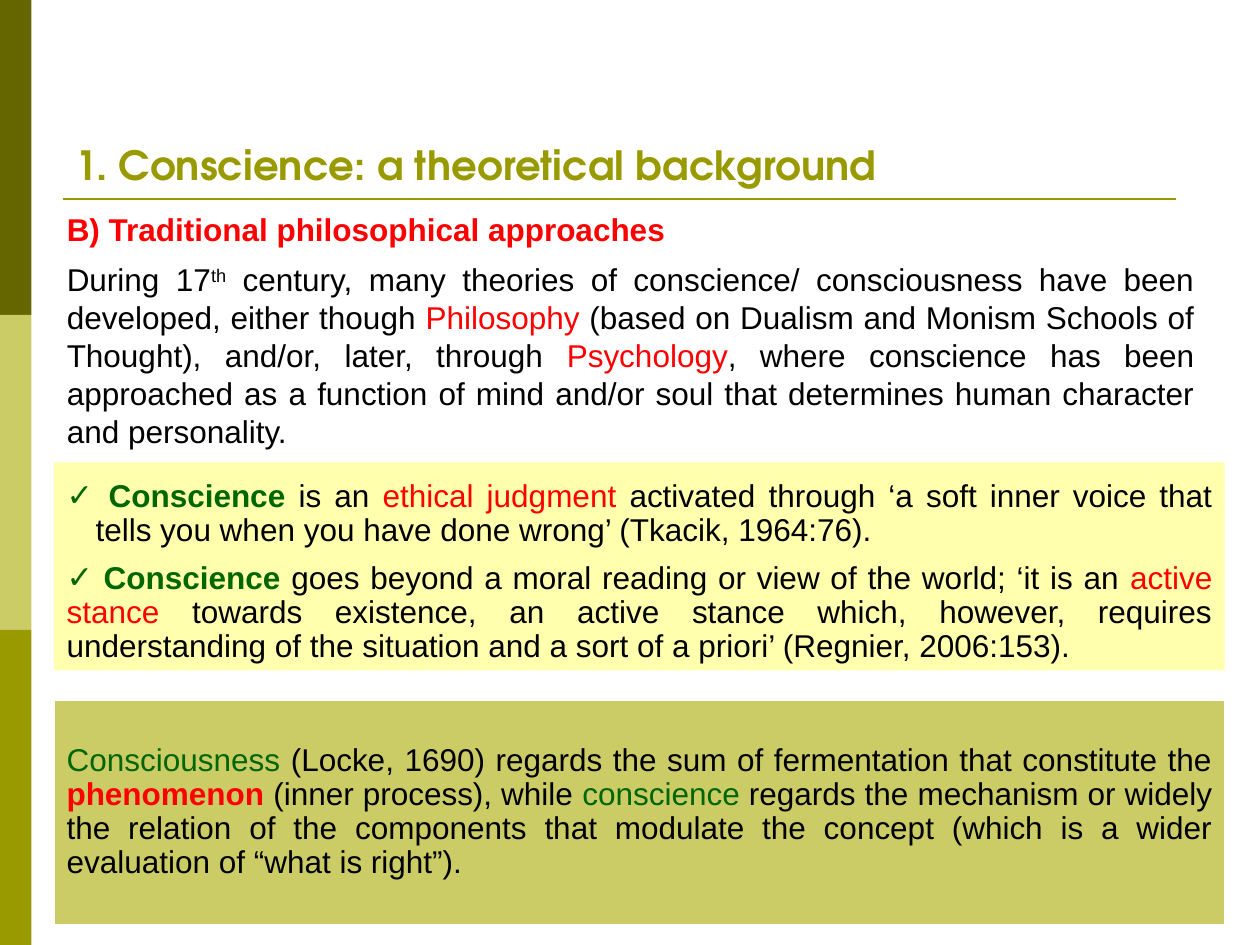
from dataclasses import dataclass

from pptx import Presentation
from pptx.dml.color import RGBColor
from pptx.enum.shapes import MSO_CONNECTOR, MSO_SHAPE
from pptx.enum.text import MSO_ANCHOR, MSO_AUTO_SIZE, PP_ALIGN
from pptx.oxml.ns import qn
from pptx.util import Inches, Pt


@dataclass(frozen=True)
class Theme:
    title_font: str = "TeX Gyre Adventor"
    body_font: str = "Arial"
    title_size: float = 23
    body_size: float = 18
    dark: str = "666600"
    olive: str = "999900"
    light: str = "CCCC66"
    cream: str = "FFFFAD"
    white: str = "FFFFFF"
    black: str = "000000"
    red: str = "FF0000"
    green: str = "006600"


T = Theme()


def rgb(value):
    return RGBColor.from_string(value)


def add_text(p, text, color=T.black, bold=False, size=T.body_size,
             font=T.body_font, baseline=None):
    r = p.add_run()
    r.text = text
    f = r.font
    f.name, f.size, f.bold = font, Pt(size), bold
    f.color.rgb = rgb(color)
    if baseline:
        r._r.get_or_add_rPr().set("baseline", str(baseline * 1000))


def add_paragraph(tf, runs, first=False, align=PP_ALIGN.JUSTIFY, before=0,
                  spacing=1.0, bullet=None, hanging=0):
    """Add (text, format) runs as one paragraph, with an optional bullet."""
    p = tf.paragraphs[0] if first else tf.add_paragraph()
    p.alignment, p.line_spacing = align, spacing
    p.space_before, p.space_after = Pt(before), Pt(0)
    pPr = p._p.get_or_add_pPr()
    pPr.set("marL", str(Inches(hanging)))
    pPr.set("indent", str(-Inches(hanging)))
    if bullet:
        pPr.append(pPr.makeelement(qn("a:buFont"), {"typeface": T.body_font}))
        pPr.append(pPr.makeelement(qn("a:buChar"), {"char": bullet}))
    else:
        pPr.append(pPr.makeelement(qn("a:buNone"), {}))
    for text, fmt in runs:
        add_text(p, text, **fmt)


def place(sp, box):
    sp.left, sp.top, sp.width, sp.height = (Inches(v) for v in box)


def set_frame(sp, anchor):
    tf = sp.text_frame
    tf.word_wrap, tf.auto_size = True, MSO_AUTO_SIZE.NONE
    tf.vertical_anchor = anchor
    return tf


def add_panel(s, box, fill, line=None):
    sp = s.shapes.add_shape(MSO_SHAPE.RECTANGLE, *(Inches(v) for v in box))
    sp.shadow.inherit = False
    sp.fill.solid()
    sp.fill.fore_color.rgb = rgb(fill)
    if line:
        sp.line.color.rgb = rgb(line)
        sp.line.width = Pt(0.75)
    else:
        sp.line.fill.background()
    return sp


def add_sidebar(s, box):
    x, y, w, h = box
    colors = (T.dark, T.light, T.olive)
    step = h / len(colors)
    for i, color in enumerate(colors):
        add_panel(s, (x, y + i * step, w, step), color)


def add_title(s, box):
    sp = s.shapes.title
    place(sp, box)
    tf = set_frame(sp, MSO_ANCHOR.BOTTOM)
    runs = [("1. Conscience: a theoretical background",
             dict(color=T.olive, bold=True, size=T.title_size, font=T.title_font))]
    add_paragraph(tf, runs, first=True, align=PP_ALIGN.LEFT)


def add_rule(s, x1, x2, y):
    c = s.shapes.add_connector(MSO_CONNECTOR.STRAIGHT, Inches(x1), Inches(y),
                               Inches(x2), Inches(y))
    c.line.color.rgb = rgb(T.olive)
    c.line.width = Pt(1.5)
    spPr = c._element.spPr
    spPr.append(spPr.makeelement(qn("a:effectLst"), {}))


def add_body(s, box):
    sp = s.placeholders[1]
    place(sp, box)
    tf = set_frame(sp, MSO_ANCHOR.TOP)
    add_paragraph(tf, [("B) Traditional philosophical approaches",
                        dict(color=T.red, bold=True))],
                  first=True, align=PP_ALIGN.LEFT, before=3.6)
    add_paragraph(tf, [
        ("During 17", {}),
        ("th", dict(baseline=30)),
        (" century, many theories of conscience/ consciousness have been "
         "developed, either though ", {}),
        ("Philosophy", dict(color=T.red)),
        (" (based on Dualism and Monism Schools of Thought), and/or, later, "
         "through ", {}),
        ("Psychology", dict(color=T.red)),
        (", where conscience has been approached as a function of mind and/or "
         "soul that determines human character and personality.", {}),
    ], before=7)


def add_definitions(s, box):
    tf = set_frame(add_panel(s, box, T.cream), MSO_ANCHOR.BOTTOM)
    term = (" Conscience ", dict(color=T.green, bold=True))
    add_paragraph(tf, [
        term,
        ("is an ", {}),
        ("ethical judgment ", dict(color=T.red)),
        ("activated through ‘a soft inner voice that tells you when you have "
         "done wrong’ (Tkacik, 1964:76).", {}),
    ], first=True, spacing=0.9, bullet="✓", hanging=0.23)
    add_paragraph(tf, [
        term,
        ("goes beyond a moral reading or view of the world; ‘it is an ", {}),
        ("active stance ", dict(color=T.red)),
        ("towards existence, an active stance which, however, requires "
         "understanding of the situation and a sort of a priori’ "
         "(Regnier, 2006:153).", {}),
    ], before=8, spacing=0.9, bullet="✓")


def add_conclusion(s, box):
    tf = set_frame(add_panel(s, box, T.light, line=T.white), MSO_ANCHOR.MIDDLE)
    add_paragraph(tf, [
        ("Consciousness ", dict(color=T.green)),
        ("(Locke, 1690) regards the sum of fermentation that constitute the ", {}),
        ("phenomenon", dict(color=T.red, bold=True)),
        (" (inner process), while ", {}),
        ("conscience", dict(color=T.green)),
        (" regards the mechanism or widely the relation of the components that "
         "modulate the concept (which is a wider evaluation of “what is "
         "right”).", {}),
    ], first=True, spacing=0.9)


def main():
    prs = Presentation()
    prs.slide_width, prs.slide_height = Inches(10), Inches(7.5)
    s = prs.slides.add_slide(prs.slide_layouts[1])
    add_sidebar(s, (0, 0, 0.25, 7.5))
    add_rule(s, 0.5, 9.33, 1.58)
    add_title(s, (0.5, 0.28, 9, 1.27))
    add_body(s, (0.43, 1.62, 9.15, 4.09))
    add_definitions(s, (0.43, 3.67, 9.29, 1.65))
    add_conclusion(s, (0.43, 5.56, 9.29, 1.78))
    prs.save("out.pptx")


if __name__ == "__main__":
    main()
